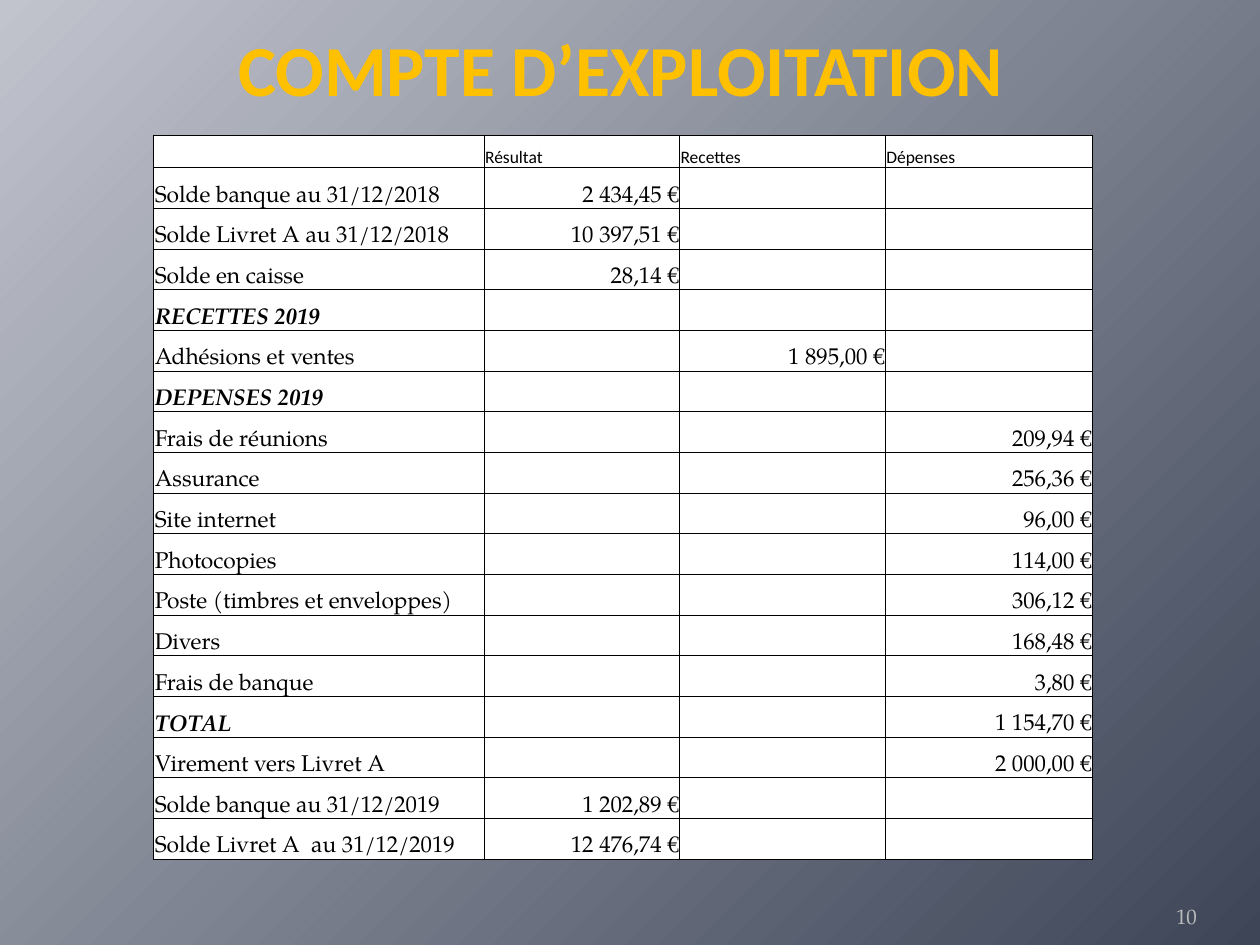
"""Build the "Compte d'exploitation" slide with its income and expense table."""
from lxml.etree import SubElement
from pptx import Presentation
from pptx.dml.color import RGBColor
from pptx.enum.text import MSO_ANCHOR as Anchor, PP_ALIGN as Align
from pptx.oxml.ns import qn
from pptx.util import Cm, Pt

GOLD = RGBColor(0xFF, 0xC0, 0x00)
BLACK = RGBColor(0x00, 0x00, 0x00)
WHITE = RGBColor(0xFF, 0xFF, 0xFF)
PALE_GREY = RGBColor(0xBD, 0xBD, 0xBD)
LIGHT_SLATE = RGBColor(0xC1, 0xC4, 0xCD)
DARK_SLATE = RGBColor(0x3D, 0x45, 0x57)
SANS = "Calibri"
SERIF = "TeX Gyre Pagella"

HEADINGS = ("", "Résultat", "Recettes", "Dépenses")
ACCOUNTS = [
    ("Solde banque au 31/12/2018", "2 434,45 €", "", ""),
    ("Solde Livret A au 31/12/2018", "10 397,51 €", "", ""),
    ("Solde en caisse", "28,14 €", "", ""),
    ("RECETTES 2019", "", "", ""),
    ("Adhésions et ventes", "", "1 895,00 €", ""),
    ("DEPENSES 2019", "", "", ""),
    ("Frais de réunions", "", "", "209,94 €"),
    ("Assurance", "", "", "256,36 €"),
    ("Site internet", "", "", "96,00 €"),
    ("Photocopies", "", "", "114,00 €"),
    ("Poste (timbres et enveloppes)", "", "", "306,12 €"),
    ("Divers", "", "", "168,48 €"),
    ("Frais de banque", "", "", "3,80 €"),
    ("TOTAL", "", "", "1 154,70 €"),
    ("Virement vers Livret A", "", "", "2 000,00 €"),
    ("Solde banque au 31/12/2019", "1 202,89 €", "", ""),
    ("Solde Livret A  au 31/12/2019", "12 476,74 €", "", ""),
]
SECTIONS = {"RECETTES 2019", "DEPENSES 2019", "TOTAL"}
COLUMN_WIDTHS = (6.66, 3.94, 4.15, 4.17)
HEADING_HEIGHT = 0.66
ACCOUNT_HEIGHT = 0.82


def write(frame, text, align, font, size, color, bold=False, italic=False):
    frame.text = text
    paragraph = frame.paragraphs[0]
    paragraph.alignment = align
    for run in paragraph.runs:
        run.font.name = font
        run.font.size = Pt(size)
        run.font.color.rgb = color
        run.font.bold = bold
        run.font.italic = italic
    if not text:
        SubElement(paragraph._p, qn("a:endParaRPr"), sz=str(size * 100))


def draw_borders(cell):
    properties = cell._tc.get_or_add_tcPr()
    for side in ("lnL", "lnR", "lnT", "lnB"):
        border = SubElement(properties, qn(f"a:{side}"), w=str(Pt(0.5)))
        fill = SubElement(border, qn("a:solidFill"))
        SubElement(fill, qn("a:srgbClr"), val=str(BLACK))


prs = Presentation()
prs.slide_width = Cm(25.4)
prs.slide_height = Cm(19.05)
slide = prs.slides.add_slide(prs.slide_layouts[6])

backdrop = slide.background.fill
backdrop.gradient()
backdrop.gradient_angle = 315
for stop, shade in zip(backdrop.gradient_stops, (LIGHT_SLATE, DARK_SLATE)):
    stop.color.rgb = shade

title = slide.shapes.add_textbox(Cm(1.09), Cm(0), Cm(22.86), Cm(2.72)).text_frame
title.word_wrap = True
title.vertical_anchor = Anchor.MIDDLE
write(title, "COMPTE D’EXPLOITATION", Align.CENTER, SANS, 41, GOLD, bold=True)

accounts = slide.shapes.add_table(
    len(ACCOUNTS) + 1, len(HEADINGS), Cm(3.1), Cm(2.72), Cm(sum(COLUMN_WIDTHS)),
    Cm(HEADING_HEIGHT + ACCOUNT_HEIGHT * len(ACCOUNTS))).table
accounts.first_row = False
accounts.horz_banding = False
for column, width in zip(accounts.columns, COLUMN_WIDTHS):
    column.width = Cm(width)

for row_index, entries in enumerate([HEADINGS, *ACCOUNTS]):
    is_heading = row_index == 0
    accounts.rows[row_index].height = Cm(HEADING_HEIGHT if is_heading else ACCOUNT_HEIGHT)
    font, size = (SANS, 10) if is_heading else (SERIF, 13)
    for column_index, entry in enumerate(entries):
        cell = accounts.cell(row_index, column_index)
        cell.margin_left = cell.margin_right = cell.margin_top = Cm(0.02)
        cell.margin_bottom = Cm(0)
        cell.vertical_anchor = Anchor.BOTTOM
        draw_borders(cell)
        cell.fill.solid()
        cell.fill.fore_color.rgb = WHITE
        align = Align.LEFT if is_heading or column_index == 0 else Align.RIGHT
        emphasis = entry in SECTIONS
        write(cell.text_frame, entry, align, font, size, BLACK, emphasis, emphasis)

page_number = slide.shapes.add_textbox(Cm(22.02), Cm(17.83), Cm(2.11), Cm(1.02)).text_frame
page_number.word_wrap = True
page_number.margin_left = page_number.margin_right = Cm(0)
page_number.vertical_anchor = Anchor.BOTTOM
write(page_number, "10", Align.RIGHT, SERIF, 12, PALE_GREY)

prs.save("out.pptx")
